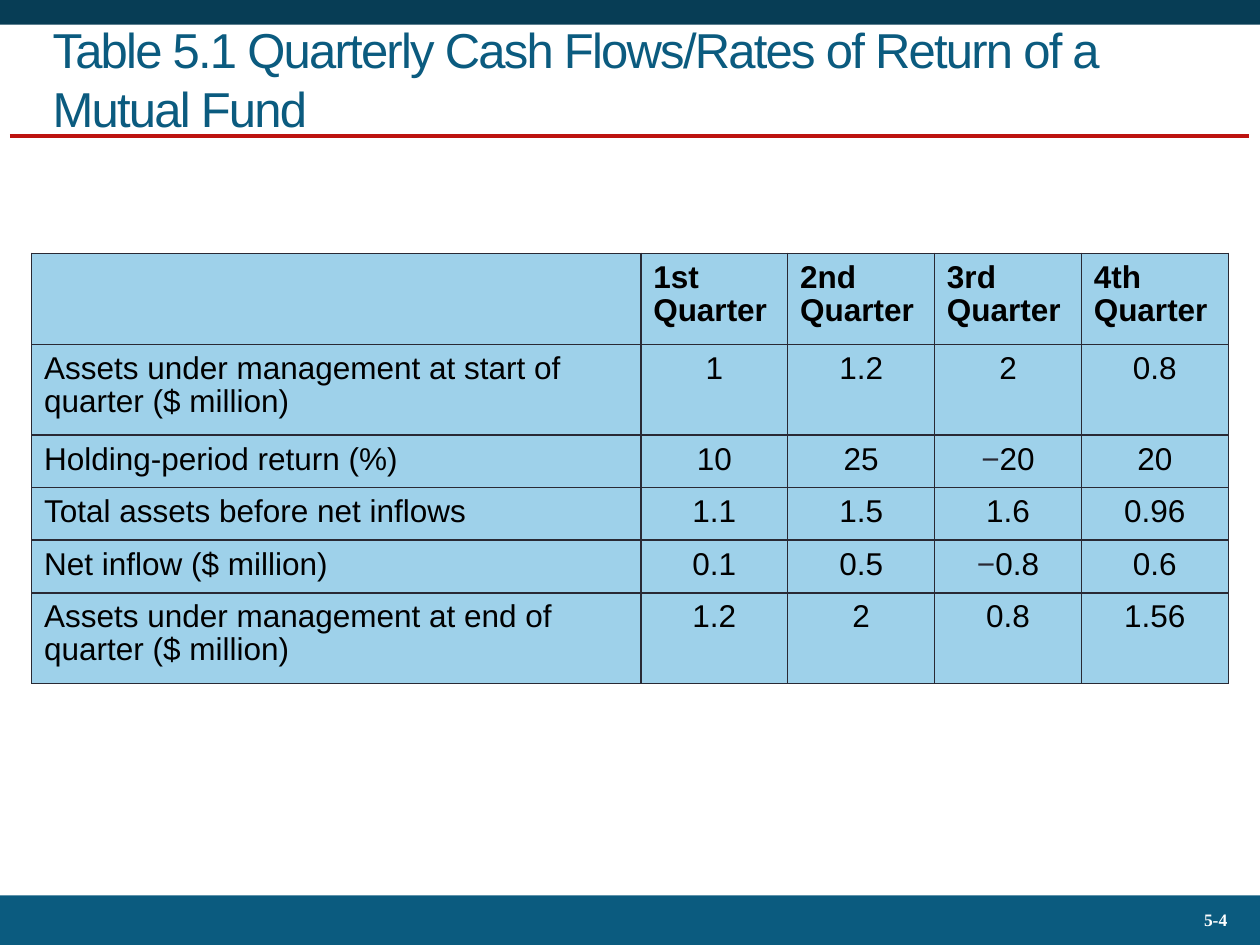
from dataclasses import dataclass

from lxml import etree
from pptx import Presentation
from pptx import util as u
from pptx.dml.color import RGBColor
from pptx.enum import shapes, text
from pptx.oxml import ns

NAVY = RGBColor(0x07, 0x3D, 0x55)
TEAL = RGBColor(0x0B, 0x5B, 0x7F)
RED = RGBColor(0xBD, 0x13, 0x0F)
SKY = RGBColor(0x9E, 0xD1, 0xEA)
CHARCOAL = RGBColor(0x29, 0x29, 0x34)
BLACK = RGBColor(0, 0, 0)
WHITE = RGBColor(255, 255, 255)

TITLE = "Table 5.1 Quarterly Cash Flows/Rates of Return of a Mutual Fund"
HEADINGS = ("", "1st Quarter", "2nd Quarter", "3rd Quarter", "4th Quarter")
LABEL_WIDTH, QUARTER_WIDTH = 12.28, 2.96
TALL, SHORT = 1.83, 1.06
MINUS = "−"


@dataclass(frozen=True)
class Band:
    top: float
    height: float
    color: RGBColor


@dataclass(frozen=True)
class Label:
    wording: str
    area: tuple[float, float, float, float]
    align: text.PP_ALIGN
    spacing: float
    font: dict
    tracking: int = 0


@dataclass(frozen=True)
class Row:
    height: float
    entries: tuple[str, ...]


BANDS = (Band(0, 0.5, NAVY), Band(18.05, 1, TEAL))
LABELS = (
    Label("5-4", (22.02, 18.11, 2.97, 0.91), text.PP_ALIGN.RIGHT, 0.93,
          {"name": "Times New Roman", "size": u.Pt(10), "bold": True, "color": WHITE}),
    Label(TITLE, (0.81, 0.43, 23.8, 2.31), text.PP_ALIGN.LEFT, 1.0,
          {"name": "Arial", "size": u.Pt(28), "bold": False, "color": TEAL}, -100),
)
ROWS = (
    Row(TALL, HEADINGS),
    Row(TALL, ("Assets under management at start of quarter ($ million)", "1", "1.2", "2", "0.8")),
    Row(SHORT, ("Holding-period return (%)", "10", "25", "−20", "20")),
    Row(SHORT, ("Total assets before net inflows", "1.1", "1.5", "1.6", "0.96")),
    Row(SHORT, ("Net inflow ($ million)", "0.1", "0.5", "−0.8", "0.6")),
    Row(TALL, ("Assets under management at end of quarter ($ million)", "1.2", "2", "0.8", "1.56")),
)


def set_all(target, values: dict) -> None:
    """Set every named attribute, sending a colour to the font's RGB value."""
    for name, value in values.items():
        if name == "color":
            target.color.rgb = value
        else:
            setattr(target, name, value)


def add_span(para, wording: str, font: dict):
    """Append formatted text to a paragraph."""
    span = para.add_run()
    span.text = wording
    set_all(span.font, font)
    return span


def draw_band(page, band: Band, width: int) -> None:
    """Draw a full-width coloured band."""
    box = page.shapes.add_shape(shapes.MSO_SHAPE.RECTANGLE, 0, u.Cm(band.top),
                                width, u.Cm(band.height))
    box.shadow.inherit = False
    box.fill.solid()
    box.fill.fore_color.rgb = band.color
    box.line.fill.background()


def draw_rule(page) -> None:
    """Draw the red rule under the title."""
    rule = page.shapes.add_connector(shapes.MSO_CONNECTOR.STRAIGHT,
                                     u.Cm(0.2), u.Cm(2.74), u.Cm(25.17), u.Cm(2.74))
    rule.line.color.rgb = RED
    rule.line.width = u.Pt(2.25)
    etree.SubElement(rule._element.spPr, ns.qn("a:effectLst"))


def draw_label(page, label: Label) -> None:
    """Draw a text box centred vertically on its text."""
    box = page.shapes.add_textbox(*map(u.Cm, label.area))
    set_all(box.text_frame, {"word_wrap": True, "vertical_anchor": text.MSO_ANCHOR.MIDDLE})
    para = box.text_frame.paragraphs[0]
    set_all(para, {"alignment": label.align, "line_spacing": label.spacing})
    span = add_span(para, label.wording, label.font)
    if label.tracking:
        span.font._element.set("spc", str(label.tracking))


def add_borders(cell) -> None:
    """Give a cell a thin line on all four sides."""
    properties = cell._tc.get_or_add_tcPr()
    for side in ("lnL", "lnR", "lnT", "lnB"):
        line = etree.SubElement(properties, ns.qn(f"a:{side}"), w=str(u.Pt(1)))
        fill = etree.SubElement(line, ns.qn("a:solidFill"))
        etree.SubElement(fill, ns.qn("a:srgbClr"), val=str(CHARCOAL))


def fill_cell(cell, wording: str, heading: bool, centred: bool) -> None:
    """Format a table cell and write its text."""
    add_borders(cell)
    cell.fill.solid()
    cell.fill.fore_color.rgb = SKY
    set_all(cell, {"margin_left": u.Cm(0.25), "margin_top": u.Cm(0.18),
                   "margin_right": u.Cm(0.25), "margin_bottom": u.Cm(0.13)})
    para = cell.text_frame.paragraphs[0]
    align = text.PP_ALIGN.CENTER if centred else text.PP_ALIGN.LEFT
    set_all(para, {"alignment": align, "line_spacing": 0.93})
    font = {"name": "Arial", "size": u.Pt(18), "bold": heading, "color": BLACK}
    if wording.startswith(MINUS):
        add_span(para, MINUS, font | {"color": CHARCOAL})
    if wording:
        add_span(para, wording.removeprefix(MINUS), font)


def draw_table(page, rows: tuple[Row, ...]) -> None:
    """Draw the quarterly cash flow table."""
    widths = [LABEL_WIDTH] + [QUARTER_WIDTH] * (len(HEADINGS) - 1)
    frame = page.shapes.add_table(len(rows), len(widths), u.Cm(0.64), u.Cm(5.11),
                                  u.Cm(sum(widths)), u.Cm(sum(row.height for row in rows)))
    table = frame.table
    set_all(table, {"first_row": False, "horz_banding": False})
    for column, width in zip(table.columns, widths):
        column.width = u.Cm(width)
    for index, row in enumerate(rows):
        table.rows[index].height = u.Cm(row.height)
        for position, wording in enumerate(row.entries):
            fill_cell(table.cell(index, position), wording, index == 0,
                      index > 0 and position > 0)


def main() -> None:
    """Build and save the slide."""
    deck = Presentation()
    set_all(deck, {"slide_width": u.Cm(25.4), "slide_height": u.Cm(19.05)})
    page = deck.slides.add_slide(deck.slide_layouts[6])
    for band in BANDS:
        draw_band(page, band, deck.slide_width)
    draw_rule(page)
    for label in LABELS:
        draw_label(page, label)
    draw_table(page, ROWS)
    deck.save("out.pptx")


if __name__ == "__main__":
    main()
